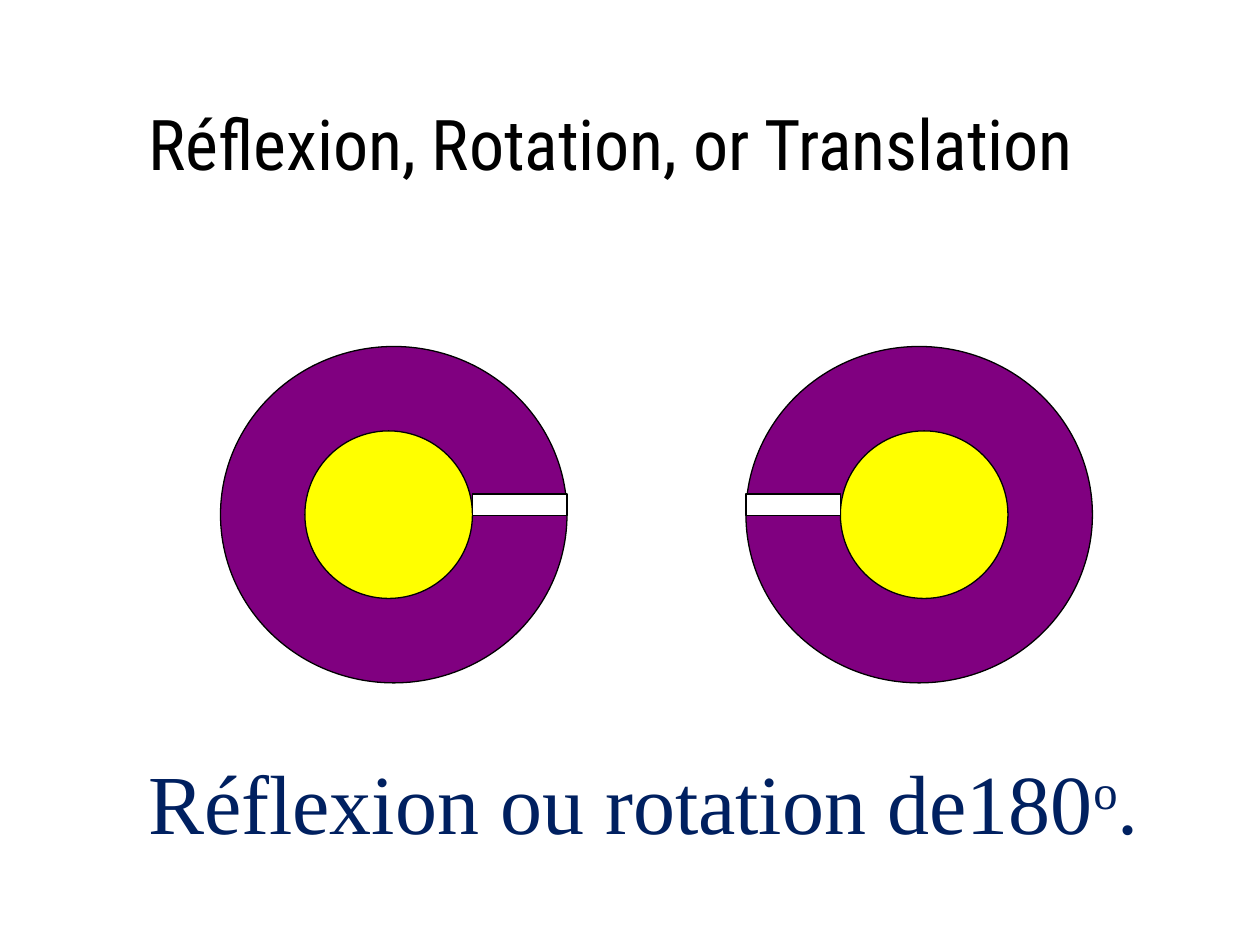
import pptx
import pptx.util
import pptx.dml.color
import pptx.enum.shapes
import pptx.enum.text

Inches = pptx.util.Inches
SHAPE = pptx.enum.shapes.MSO_SHAPE
MIRROR_SUM = 10.42
RING_PARTS = [
    (SHAPE.OVAL, 1.75, 2.75, 2.75, 2.67, "800080"),
    (SHAPE.OVAL, 2.42, 3.42, 1.33, 1.33, "FFFF00"),
    (SHAPE.RECTANGLE, 3.75, 3.92, 0.75, 0.17, "FFFFFF"),
]


def color(value):
    return pptx.dml.color.RGBColor.from_string(value)


def add_ring(s, mirrored):
    group = s.shapes.add_group_shape()
    for kind, left, top, width, height, fill in RING_PARTS:
        if mirrored:
            left = MIRROR_SUM - left - width
        sp = group.shapes.add_shape(
            kind, Inches(left), Inches(top), Inches(width), Inches(height))
        sp.shadow.inherit = False
        sp.fill.solid()
        sp.fill.fore_color.rgb = color(fill)
        sp.line.color.rgb = color("000000")
        sp.line.width = pptx.util.Pt(0.75)


def format_run(r, font, size, hex_color):
    r.font.name = font
    r.font.size = pptx.util.Pt(size)
    r.font.color.rgb = color(hex_color)


def set_title(s):
    sp = s.shapes.title
    sp.left, sp.top = Inches(1.08), Inches(0.75)
    sp.width, sp.height = Inches(8.25), Inches(1.25)
    tf = sp.text_frame
    tf.text = "Réflexion, Rotation, or Translation"
    tf.word_wrap = True
    tf.auto_size = pptx.enum.text.MSO_AUTO_SIZE.NONE
    tf.vertical_anchor = pptx.enum.text.MSO_ANCHOR.TOP
    p = tf.paragraphs[0]
    p.alignment = pptx.enum.text.PP_ALIGN.LEFT
    format_run(p.runs[0], "Roboto Condensed", 40, "000000")


def add_answer(s):
    sp = s.shapes.add_textbox(
        Inches(1.08), Inches(5.91), Inches(9.08), Inches(0.91))
    tf = sp.text_frame
    tf.word_wrap = True
    tf.auto_size = pptx.enum.text.MSO_AUTO_SIZE.SHAPE_TO_FIT_TEXT
    p = tf.paragraphs[0]
    for text, baseline in [
            ("Réflexion ou rotation de180", 0), ("o", 30), (".", 0)]:
        r = p.add_run()
        r.text = text
        format_run(r, "Times New Roman", 48, "002060")
        if baseline:
            r._r.get_or_add_rPr().set("baseline", str(baseline * 1000))


def main():
    prs = pptx.Presentation()
    prs.slide_width, prs.slide_height = Inches(10), Inches(7.5)
    s = prs.slides.add_slide(prs.slide_layouts[5])
    set_title(s)
    for mirrored in (False, True):
        add_ring(s, mirrored)
    add_answer(s)
    prs.save("out.pptx")


if __name__ == "__main__":
    main()
